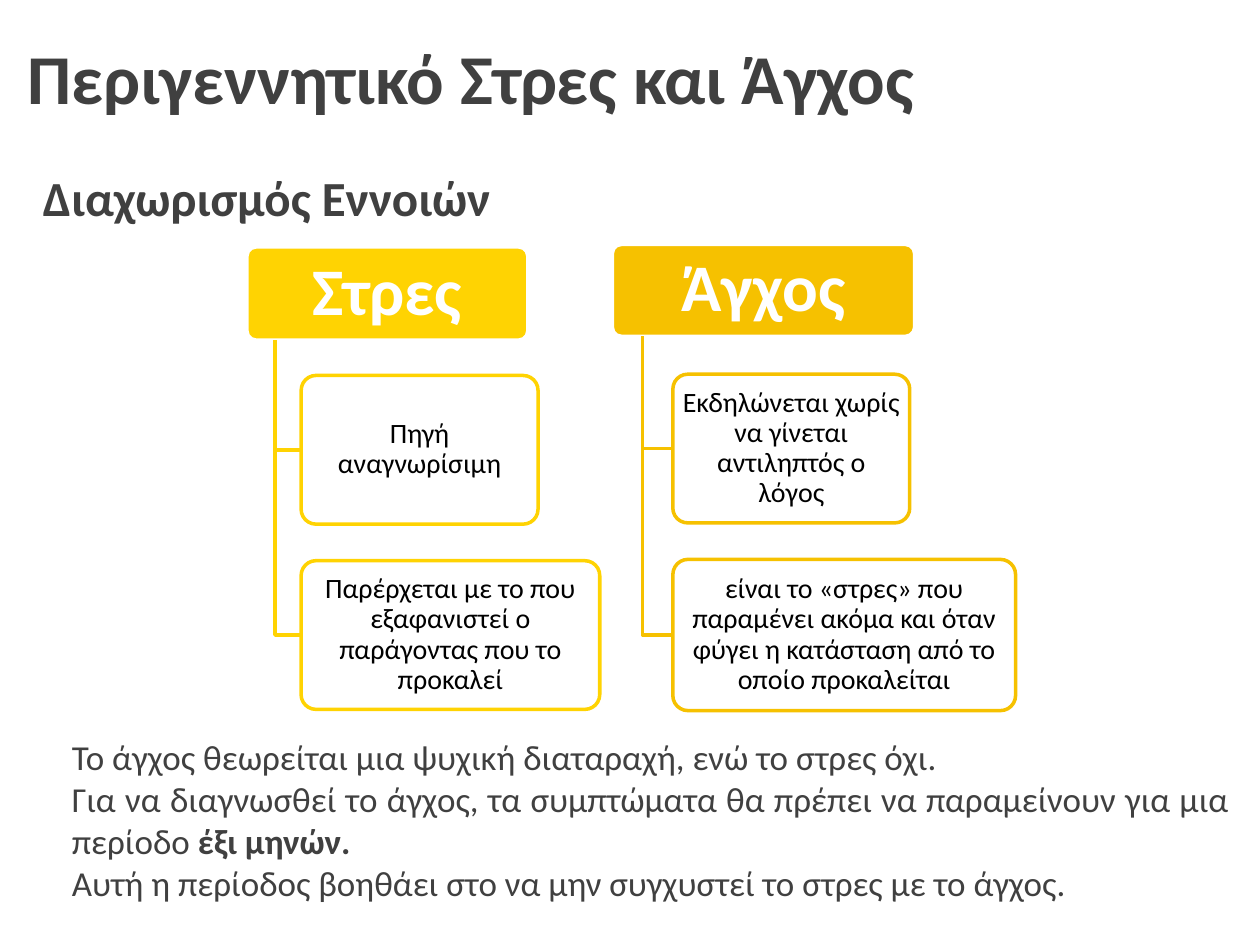
import pptx
import pptx.util
import pptx.dml.color
import pptx.enum.shapes
import pptx.enum.text
from lxml import etree

Inches, Pt = pptx.util.Inches, pptx.util.Pt
ALIGN = pptx.enum.text.PP_ALIGN
MIDDLE = pptx.enum.text.MSO_ANCHOR.MIDDLE

FONT = "Calibri"
WHITE, BLACK, GREY = "FFFFFF", "000000", "404040"
TITLE = "Περιγεννητικό Στρες και Άγχος"
SUBTITLE = "Διαχωρισμός Εννοιών"

# Each paragraph is a list of (text, bold) runs
NOTES = [
    [("Το άγχος θεωρείται μια ψυχική διαταραχή, ενώ το στρες όχι.", False)],
    [("Για να διαγνωσθεί το άγχος, τα συμπτώματα θα πρέπει να παραμείνουν "
      "για μια περίοδο ", False), ("έξι μηνών.", True)],
    [("Αυτή η περίοδος βοηθάει στο να μην συγχυστεί το στρες με το άγχος.", False)],
]

# Boxes are (left, top, width, height) in inches
CONCEPTS = [
    {"name": "Στρες", "colour": "FFD302", "box": (1.96, 1.96, 2.23, 0.74),
     "traits": [("Πηγή αναγνωρίσιμη", (2.39, 2.98, 1.88, 1.18)),
                ("Παρέρχεται με το που εξαφανιστεί ο παράγοντας που το προκαλεί",
                 (2.39, 4.45, 2.37, 1.18))]},
    {"name": "Άγχος", "colour": "F6C100", "box": (4.86, 1.94, 2.4, 0.73),
     "traits": [("Εκδηλώνεται χωρίς να γίνεται αντιληπτός ο λόγος",
                 (5.34, 2.97, 1.88, 1.18)),
                ("είναι το «στρες» που παραμένει ακόμα και όταν φύγει η "
                 "κατάσταση από το οποίο προκαλείται", (5.34, 4.44, 2.72, 1.2))]},
]


def rgb(colour):
    return pptx.dml.color.RGBColor.from_string(colour)


def style(r, size, colour, bold=False):
    r.font.name, r.font.size, r.font.bold = FONT, Pt(size), bold
    r.font.color.rgb = rgb(colour)


def fill_placeholder(sp, box, paragraphs, size, align=ALIGN.LEFT, anchor=MIDDLE):
    sp.left, sp.top, sp.width, sp.height = map(Inches, box)
    tf = sp.text_frame
    tf.word_wrap = True
    tf.auto_size = pptx.enum.text.MSO_AUTO_SIZE.NONE
    tf.vertical_anchor = anchor
    for i, runs in enumerate(paragraphs):
        p = tf.add_paragraph() if i else tf.paragraphs[0]
        p.alignment = align
        p.space_before = Pt(0)
        pPr = p._p.get_or_add_pPr()
        pPr.set("marL", "0")
        pPr.set("indent", "0")
        etree.SubElement(pPr, pptx.oxml.ns.qn("a:buNone"))
        for text, bold in runs:
            r = p.add_run()
            r.text = text
            style(r, size, GREY, bold)
    return tf


def add_box(s, box, text, fill, line, size, colour, bold, insets):
    sp = s.shapes.add_shape(pptx.enum.shapes.MSO_SHAPE.ROUNDED_RECTANGLE,
                            *map(Inches, box))
    sp.adjustments[0] = 0.1
    sp.shadow.inherit = False
    sp.fill.solid()
    sp.fill.fore_color.rgb = rgb(fill)
    sp.line.color.rgb = rgb(line)
    sp.line.width = Pt(2)
    tf = sp.text_frame
    tf.word_wrap = True
    tf.vertical_anchor = MIDDLE
    tf.margin_left = tf.margin_right = Inches(insets[0])
    tf.margin_top = tf.margin_bottom = Inches(insets[1])
    tf.text = text
    p = tf.paragraphs[0]
    p.alignment = ALIGN.CENTER
    p.line_spacing = 0.9
    style(p.runs[0], size, colour, bold)


def add_branch(s, header, trait, colour):
    """Elbow from a tenth along the header's foot to the middle of the trait's left side."""
    x, y = header[0] + header[2] / 10, header[1] + header[3]
    end_x, end_y = trait[0], trait[1] + trait[3] / 2
    builder = s.shapes.build_freeform(Inches(x), Inches(y))
    builder.add_line_segments([(Inches(x), Inches(end_y)),
                               (Inches(end_x), Inches(end_y))], close=False)
    sp = builder.convert_to_shape()
    sp.shadow.inherit = False
    sp.fill.background()
    sp.line.color.rgb = rgb(colour)
    sp.line.width = Pt(2)


def main():
    prs = pptx.Presentation()
    prs.slide_width, prs.slide_height = Inches(10), Inches(7.5)
    s = prs.slides.add_slide(prs.slide_layouts.get_by_name("Two Content"))
    for sp in list(s.placeholders)[3:]:
        sp.element.getparent().remove(sp.element)
    title, subtitle, notes = s.placeholders

    fill_placeholder(title, (0.12, 0.02, 9.88, 1.17), [[(TITLE, True)]], 40)
    fill_placeholder(subtitle, (0.24, 1.31, 9, 0.5), [[(SUBTITLE, True)]], 28)
    tf = fill_placeholder(notes, (0.14, 5.79, 9.72, 1.46), NOTES, 20,
                          ALIGN.JUSTIFY, pptx.enum.text.MSO_ANCHOR.TOP)
    tf.margin_left = Inches(0.43)

    for concept in CONCEPTS:
        colour, header = concept["colour"], concept["box"]
        add_box(s, header, concept["name"], colour, WHITE, 38, WHITE, True, (0.08, 0.05))
        for text, box in concept["traits"]:
            add_branch(s, header, box, colour)
            add_box(s, box, text, WHITE, colour, 16, BLACK, False, (0.03, 0.02))

    prs.save("out.pptx")


if __name__ == "__main__":
    main()
